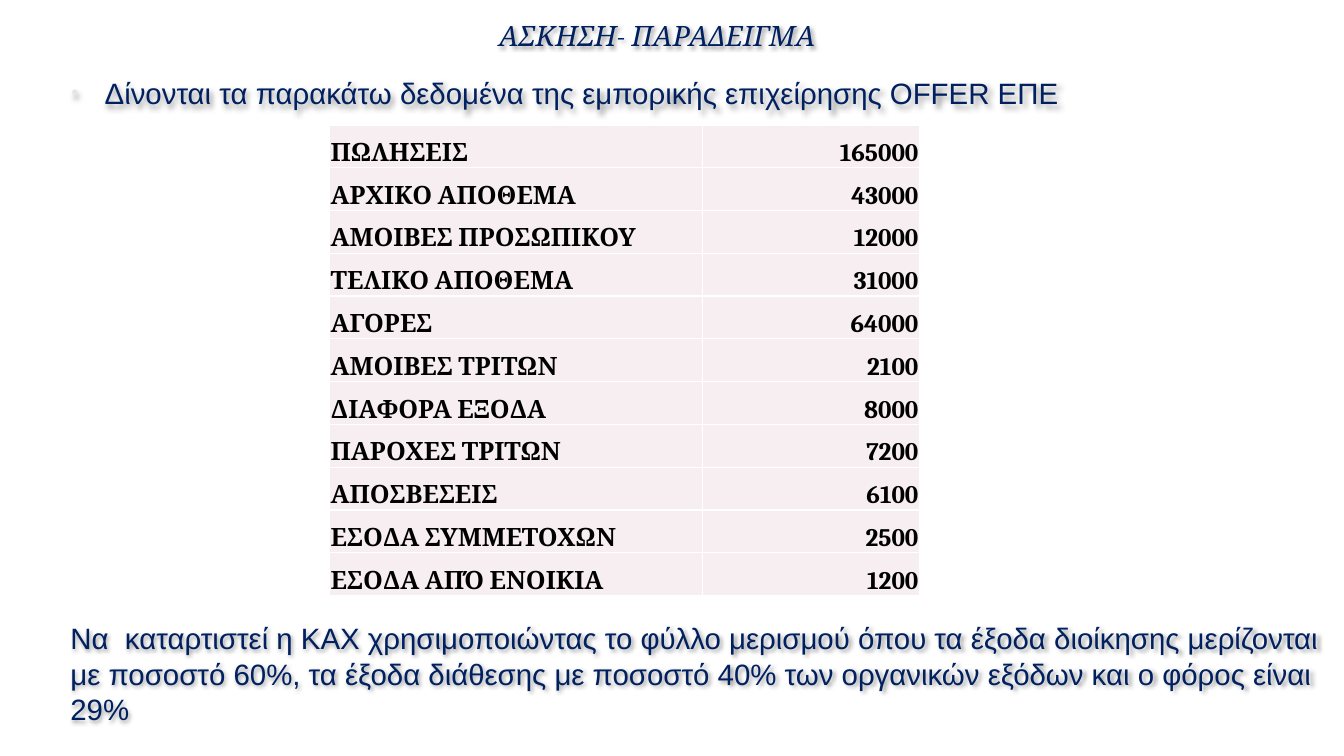
from dataclasses import dataclass
from lxml.etree import SubElement as Sub
from pptx import Presentation as Deck
from pptx.dml.color import RGBColor as Rgb
from pptx.enum.text import MSO_ANCHOR as Anchor, PP_ALIGN as Align
from pptx.oxml import parse_xml
from pptx.oxml.ns import nsdecls, qn
from pptx.util import Inches, Pt


@dataclass(frozen=True)
class Theme:
    """Colours, fonts and type sizes of the slide."""
    navy: str = "002060"
    black: str = "000000"
    white: str = "FFFFFF"
    cell: str = "F6EEF0"
    dot: str = "E2E8E6"
    serif: str = "Cambria"
    sans: str = "Arial"
    head: int = 20
    body: int = 21
    data: int = 18


LOOK = Theme()
WIDE, HIGH = Inches(13.33), Inches(7.5)
ROWS = (
    ("ΠΩΛΗΣΕΙΣ", 165000),
    ("ΑΡΧΙΚΟ ΑΠΟΘΕΜΑ", 43000),
    ("ΑΜΟΙΒΕΣ ΠΡΟΣΩΠΙΚΟΥ", 12000),
    ("ΤΕΛΙΚΟ ΑΠΟΘΕΜΑ", 31000),
    ("ΑΓΟΡΕΣ", 64000),
    ("ΑΜΟΙΒΕΣ ΤΡΙΤΩΝ", 2100),
    ("ΔΙΑΦΟΡΑ ΕΞΟΔΑ", 8000),
    ("ΠΑΡΟΧΕΣ ΤΡΙΤΩΝ", 7200),
    ("ΑΠΟΣΒΕΣΕΙΣ", 6100),
    ("ΕΣΟΔΑ ΣΥΜΜΕΤΟΧΩΝ", 2500),
    ("ΕΣΟΔΑ ΑΠΌ ΕΝΟΙΚΙΑ", 1200),
)
TASK = (
    "Να  καταρτιστεί η ΚΑΧ χρησιμοποιώντας το φύλλο μερισμού όπου τα έξοδα "
    "διοίκησης μερίζονται με ποσοστό 60%, τα έξοδα διάθεσης με ποσοστό 40% "
    "των οργανικών εξόδων και ο φόρος είναι 29%"
)


def across(share):
    """Turn a percentage of the slide width into a length."""
    return round(WIDE * share / 100)


def down(share):
    """Turn a percentage of the slide height into a length."""
    return round(HIGH * share / 100)


def write(frame, text, font=LOOK.sans, size=LOOK.body, color=LOOK.navy,
          bold=False, italic=False, align=Align.LEFT, line=1.0):
    """Put formatted text in the first paragraph of a frame and return it."""
    para = frame.paragraphs[0]
    para.alignment, para.line_spacing = align, line
    run = para.add_run()
    run.text = text
    face = run.font
    face.name, face.size, face.bold, face.italic = font, Pt(size), bold, italic
    face.color.rgb = Rgb.from_string(color)
    return para


def glow(shape):
    """Give the text of an unfilled box a soft shadow."""
    shape._element.spPr.append(parse_xml(
        f'<a:effectLst {nsdecls("a")}><a:outerShdw blurRad="38100" dist="19050" '
        f'dir="2700000" algn="tl" rotWithShape="0"><a:srgbClr val="{LOOK.black}">'
        '<a:alpha val="40000"/></a:srgbClr></a:outerShdw></a:effectLst>'))


def label(slide, text, left, top, width, height, anchor=Anchor.TOP, **form):
    """Add a wrapped text box placed by slide shares."""
    box = slide.shapes.add_textbox(across(left), down(top), across(width), down(height))
    frame = box.text_frame
    frame.word_wrap, frame.vertical_anchor = True, anchor
    glow(box)
    return write(frame, text, **form)


def indent(para, left, hang=0.0):
    """Set the left margin and first line indent in inches."""
    props = para._p.get_or_add_pPr()
    props.set("marL", str(Inches(left)))
    props.set("indent", str(Inches(hang)))
    return props


def bullet(para):
    """Add a small pale bullet with a hanging indent."""
    props = indent(para, 0.38, -0.33)
    Sub(Sub(props, qn("a:buClr")), qn("a:srgbClr")).set("val", LOOK.dot)
    Sub(props, qn("a:buSzPct")).set("val", "70000")
    Sub(props, qn("a:buFont")).set("typeface", LOOK.sans)
    Sub(props, qn("a:buChar")).set("char", "•")


def border(cell):
    """Draw thin white lines on all four sides of a cell."""
    props = cell._tc.get_or_add_tcPr()
    for spot, side in enumerate("LRTB"):
        props.insert(spot, parse_xml(
            f'<a:ln{side} {nsdecls("a")} w="{Pt(1)}"><a:solidFill>'
            f'<a:srgbClr val="{LOOK.white}"/></a:solidFill></a:ln{side}>'))


def fill(cell, text, align):
    """Style one table cell and write its text."""
    cell.fill.solid()
    cell.fill.fore_color.rgb = Rgb.from_string(LOOK.cell)
    cell.margin_left = cell.margin_right = cell.margin_top = Inches(0.01)
    cell.margin_bottom = 0
    cell.vertical_anchor = Anchor.BOTTOM
    border(cell)
    write(cell.text_frame, text, font=LOOK.serif, size=LOOK.data,
          color=LOOK.black, bold=True, align=align)


def ledger(slide, left, top, cols, row):
    """Add the table of accounts and amounts."""
    grid = slide.shapes.add_table(
        len(ROWS), len(cols), across(left), down(top),
        across(sum(cols)), down(row * len(ROWS))).table
    grid.first_row = grid.horz_banding = False
    for col, share in zip(grid.columns, cols):
        col.width = across(share)
    for line, (name, sum_) in zip(grid.rows, ROWS):
        line.height = down(row)
        fill(line.cells[0], name, Align.LEFT)
        fill(line.cells[1], str(sum_), Align.RIGHT)


def main():
    """Build and save the slide."""
    deck = Deck()
    deck.slide_width, deck.slide_height = WIDE, HIGH
    slide = deck.slides.add_slide(deck.slide_layouts[6])
    label(slide, "ΑΣΚΗΣΗ- ΠΑΡΑΔΕΙΓΜΑ", 6.45, 0, 84.9, 9.9, Anchor.MIDDLE,
          font=LOOK.serif, size=LOOK.head, italic=True, align=Align.CENTER, line=0.9)
    bullet(label(slide, "Δίνονται τα παρακάτω δεδομένα της εμπορικής επιχείρησης OFFER ΕΠΕ",
                 4.2, 9.3, 95.8, 6.5))
    ledger(slide, 24.53, 16.53, (27.75, 16.13), 5.66)
    indent(label(slide, TASK, 4.2, 81.4, 95.8, 16), 0.04)
    deck.save("out.pptx")


if __name__ == "__main__":
    main()
